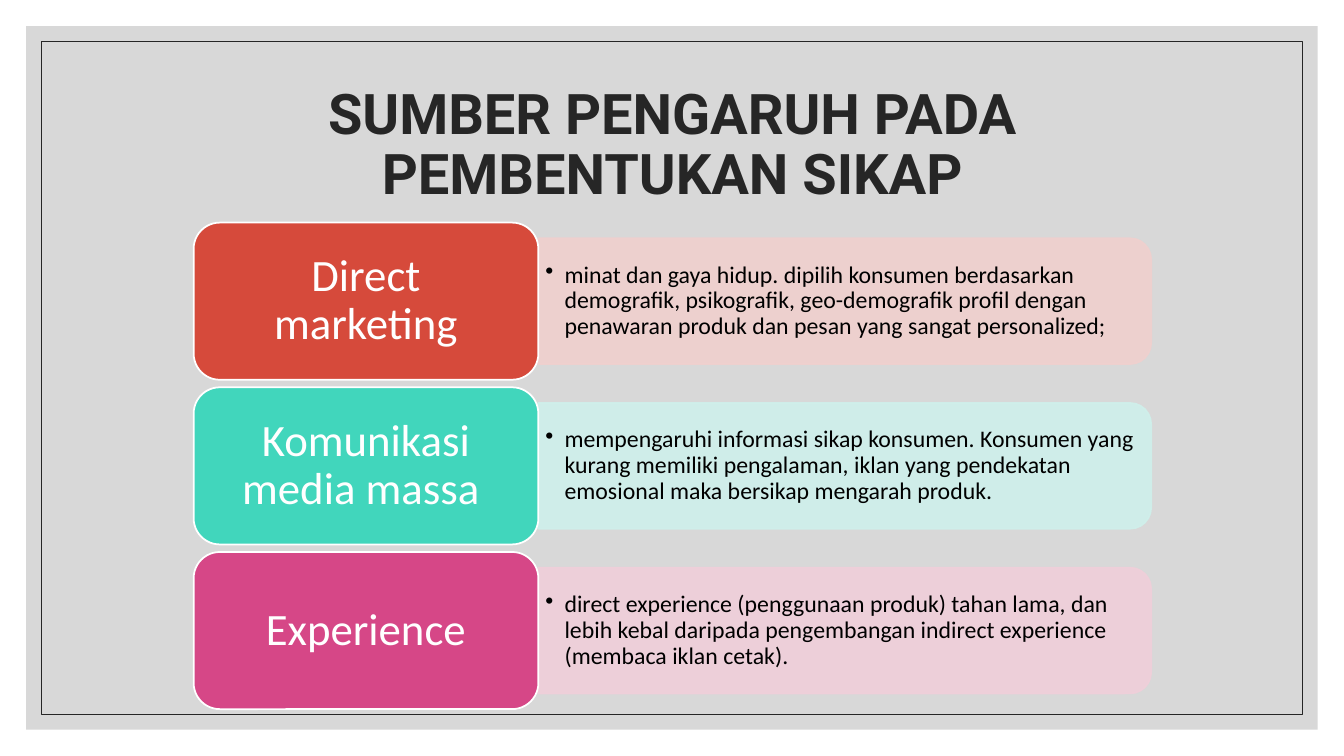
from dataclasses import dataclass

from lxml import etree
from pptx import Presentation
from pptx.dml.color import RGBColor
from pptx.enum.shapes import MSO_SHAPE
from pptx.enum.text import MSO_ANCHOR, PP_ALIGN
from pptx.oxml.ns import qn
from pptx.util import Cm, Pt

RECTANGLE = MSO_SHAPE.RECTANGLE
ROUNDED = MSO_SHAPE.ROUNDED_RECTANGLE
TOP_ROUNDED = MSO_SHAPE.ROUND_2_SAME_RECTANGLE
MIDDLE = MSO_ANCHOR.MIDDLE
LEFT, CENTER = PP_ALIGN.LEFT, PP_ALIGN.CENTER


@dataclass(frozen=True)
class Theme:
    ink: str = "262626"
    panel: str = "BFBFBF"
    white: str = "FFFFFF"
    black: str = "000000"
    title_font: str = "Roboto"
    body_font: str = "Calibri"
    title_size: int = 40
    label_size: int = 32
    detail_size: int = 17
    frame_line: float = 0.5
    card_line: float = 1.25
    panel_opacity: int = 60
    band_opacity: int = 90


THEME = Theme()
SLIDE_WIDTH, SLIDE_HEIGHT = 33.87, 19.05
TITLE = "SUMBER PENGARUH PADA PEMBENTUKAN SIKAP"
# label, label colour, band colour, detail
SOURCES = [
    ("Direct marketing", "D64A3B", "F0D0CE",
     "minat dan gaya hidup. dipilih konsumen berdasarkan demografik, "
     "psikografik, geo-demografik profil dengan penawaran produk dan pesan "
     "yang sangat personalized;"),
    ("Komunikasi media massa ", "41D6BC", "CFF0EB",
     "mempengaruhi informasi sikap konsumen. Konsumen yang kurang memiliki "
     "pengalaman, iklan yang pendekatan emosional maka bersikap mengarah "
     "produk."),
    ("Experience", "D64787", "F0CFDA",
     "direct experience (penggunaan produk) tahan lama, dan lebih kebal "
     "daripada pengembangan indirect experience (membaca iklan cetak)."),
]


def set_opacity(fill_format, percent):
    """Make a solid fill, of a shape or of its line, partly transparent."""
    fill_format.fore_color.rgb = fill_format.fore_color.rgb
    return percent


def paint(colored, color, opacity=100):
    """Fill a shape or a line with one colour."""
    colored.fill.solid()
    colored.fill.fore_color.rgb = RGBColor.from_string(color)
    if opacity < 100:
        holder = colored.fill._xPr.find(qn("a:solidFill"))
        alpha = etree.SubElement(holder[0], qn("a:alpha"))
        alpha.set("val", str(opacity * 1000))


def add_block(slide, kind, box, fill=None, line=None, line_width=0, opacity=100):
    shape = slide.shapes.add_shape(kind, *map(Cm, box))
    shape.shadow.inherit = False
    if fill:
        paint(shape, fill, opacity)
    else:
        shape.fill.background()
    if line:
        paint(shape.line, line, opacity)
        shape.line.width = Pt(line_width)
    else:
        shape.line.fill.background()
    return shape


def write(shape, text, font, color, alignment, insets, bullet_indent=0):
    """Put one middle-anchored paragraph in a shape; insets are (x, y) in cm."""
    inset_x, inset_y = map(Cm, insets)
    frame_format = {
        "word_wrap": True, "vertical_anchor": MIDDLE,
        "margin_left": inset_x, "margin_right": inset_x,
        "margin_top": inset_y, "margin_bottom": inset_y,
    }
    for name, value in frame_format.items():
        setattr(shape.text_frame, name, value)
    paragraph = shape.text_frame.paragraphs[0]
    paragraph.alignment = alignment
    paragraph.line_spacing = 0.9
    if bullet_indent:
        properties = paragraph._p.get_or_add_pPr()
        properties.set("marL", str(Cm(bullet_indent)))
        properties.set("indent", str(-Cm(bullet_indent)))
        etree.SubElement(properties, qn("a:buChar")).set("char", "•")
    run = paragraph.add_run()
    run.text = text
    for name, value in font.items():
        setattr(run.font, name, value)
    run.font.color.rgb = RGBColor.from_string(color)


def add_backdrop(slide):
    """Grey panel with a thin frame, both centred on the slide."""
    def inset_box(margin):
        return margin, margin, SLIDE_WIDTH - 2 * margin, SLIDE_HEIGHT - 2 * margin

    add_block(slide, RECTANGLE, inset_box(0.66), fill=THEME.panel,
              opacity=THEME.panel_opacity)
    add_block(slide, RECTANGLE, inset_box(1.04), line=THEME.ink,
              line_width=THEME.frame_line)


def add_title(slide, box):
    title = slide.shapes.add_textbox(*map(Cm, box))
    font = {"name": THEME.title_font, "size": Pt(THEME.title_size), "bold": True}
    write(title, TITLE, font, THEME.ink, CENTER, (0.25, 0.13))


def add_source_row(slide, box, source):
    """Coloured label on the left, tinted band with its detail on the right."""
    label_text, label_color, band_color, detail_text = source
    left, top, width, height = box
    label_width = 0.36 * width
    band_left, band_width = left + label_width, width - label_width
    band_height = 0.8 * height
    middle = top + height / 2

    # The band is an upright shape turned a quarter, so its sides swap.
    band = add_block(
        slide, TOP_ROUNDED,
        (band_left + (band_width - band_height) / 2, middle - band_width / 2,
         band_height, band_width),
        band_color, band_color, THEME.card_line, THEME.band_opacity)
    band.rotation = 90

    detail_height = 0.72 * height
    detail = slide.shapes.add_textbox(
        Cm(band_left), Cm(middle - detail_height / 2),
        Cm(band_width - 0.15), Cm(detail_height))
    detail_font = {"name": THEME.body_font, "size": Pt(THEME.detail_size)}
    write(detail, detail_text, detail_font, THEME.black, LEFT, (0.18, 0.09), 0.48)

    label = add_block(slide, ROUNDED, (left, top, label_width, height),
                      label_color, THEME.white, THEME.card_line)
    label_font = {"name": THEME.body_font, "size": Pt(THEME.label_size)}
    write(label, label_text, label_font, THEME.white, CENTER, (0.34, 0.17))


def add_sources(slide, box, gap):
    left, top, width, height = box
    row_height = (height - gap * (len(SOURCES) - 1)) / len(SOURCES)
    for index, source in enumerate(SOURCES):
        row_top = top + index * (row_height + gap)
        add_source_row(slide, (left, row_top, width, row_height), source)


def main():
    presentation = Presentation()
    presentation.slide_width = Cm(SLIDE_WIDTH)
    presentation.slide_height = Cm(SLIDE_HEIGHT)
    slide = presentation.slides.add_slide(presentation.slide_layouts[6])
    add_backdrop(slide)
    add_sources(slide, (4.88, 5.61, 24.13, 12.26), 0.19)
    add_title(slide, (2.97, 1.78, 27.94, 3.81))
    presentation.save("out.pptx")


if __name__ == "__main__":
    main()
